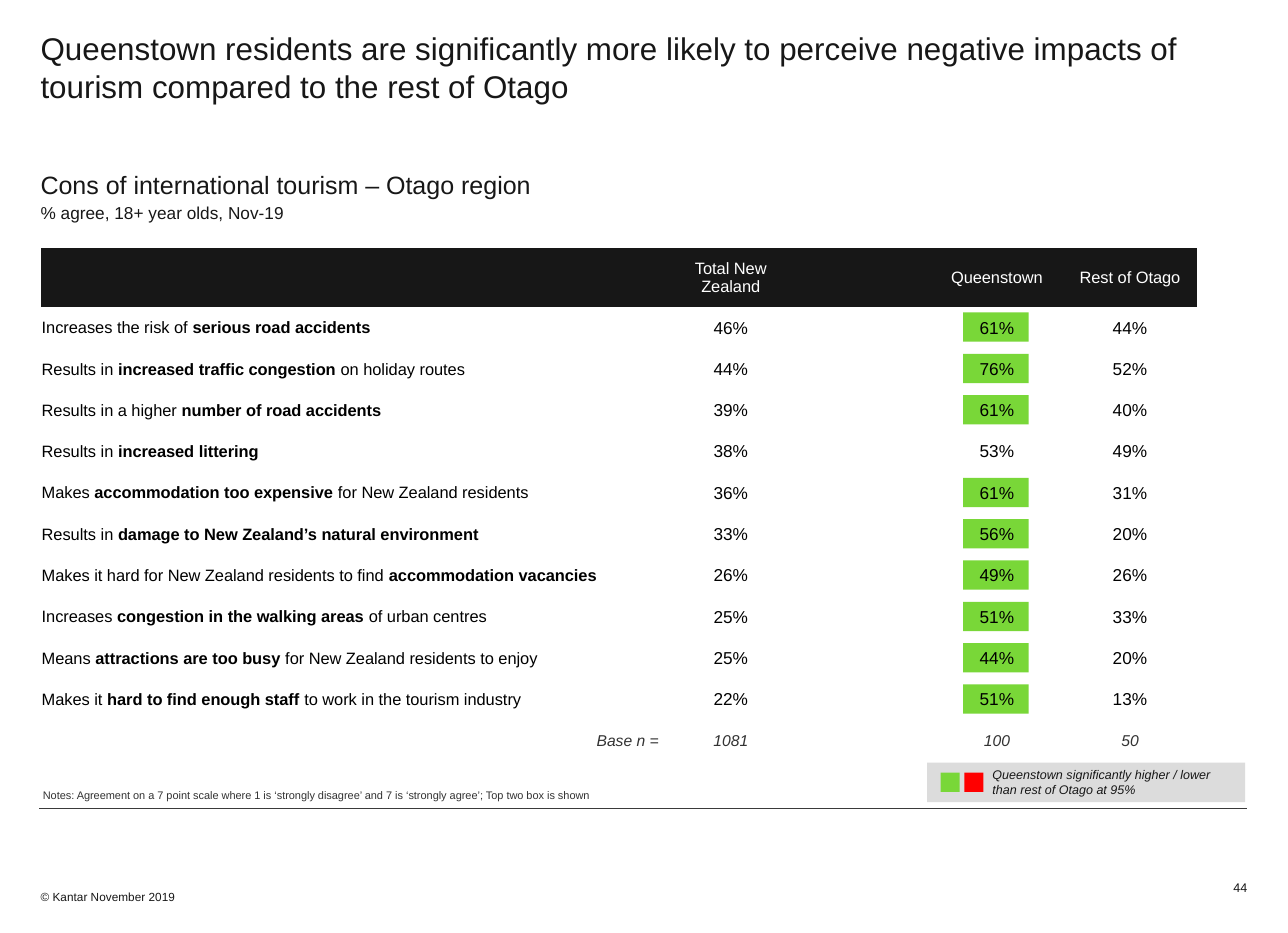
from pptx import Presentation
from pptx.dml.color import RGBColor
from pptx.enum.shapes import MSO_CONNECTOR, MSO_SHAPE
from pptx.enum.text import MSO_ANCHOR, PP_ALIGN
from pptx.oxml.ns import qn
from pptx.util import Inches, Pt
from lxml import etree

RECTANGLE = MSO_SHAPE.RECTANGLE
STRAIGHT = MSO_CONNECTOR.STRAIGHT
TOP, MIDDLE, BOTTOM = MSO_ANCHOR.TOP, MSO_ANCHOR.MIDDLE, MSO_ANCHOR.BOTTOM
LEFT, CENTER, RIGHT = PP_ALIGN.LEFT, PP_ALIGN.CENTER, PP_ALIGN.RIGHT

FONT = "Arial"
INK = "171717"
GREY = "333333"
BLACK = "000000"
WHITE = "FFFFFF"
GREEN = "79D738"
RED = "FF0000"
PLAIN_TABLE_STYLE = "{2D5ABB26-0587-4C30-8999-92F81FD0307C}"

TABLE_LEFT, TABLE_TOP = 0.36, 2.2
LABEL_WIDTH, VALUE_WIDTH = 5.53, 1.18
HEADER_HEIGHT, TABLE_HEIGHT = 0.52, 4.55

HEADINGS = ["", "Total New Zealand", "", "Queenstown", "Rest of Otago"]
IMPACTS = [
    ("Increases the risk of ", "serious road accidents", "", 46, 61, 44),
    ("Results in ", "increased traffic congestion ", "on holiday routes", 44, 76, 52),
    ("Results in a higher ", "number of road accidents", "", 39, 61, 40),
    ("Results in ", "increased littering", "", 38, 53, 49),
    ("Makes ", "accommodation too expensive ", "for New Zealand residents", 36, 61, 31),
    ("Results in ", "damage to New Zealand’s natural environment", "", 33, 56, 20),
    ("Makes it hard for New Zealand residents to find ", "accommodation vacancies", "", 26, 49, 26),
    ("Increases ", "congestion in the walking areas ", "of urban centres", 25, 51, 33),
    ("Means ", "attractions are too busy ", "for New Zealand residents to enjoy", 25, 44, 20),
    ("Makes it ", "hard to find enough staff ", "to work in the tourism industry", 22, 51, 13),
]
NOT_SIGNIFICANT = {"increased littering"}
BASES = ["Base n =", "1081", "", "100", "50"]
ROW_HEIGHT = (TABLE_HEIGHT - HEADER_HEIGHT) / (len(IMPACTS) + 1)


def color(value):
    return RGBColor.from_string(value)


def add_span(para, text, size, ink=INK, bold=False, italic=False):
    span = para.add_run()
    span.text = text
    span.font.name = FONT
    span.font.size = Pt(size)
    span.font.bold = bold
    span.font.italic = italic
    span.font.color.rgb = color(ink)


def set_margins(target, left, top, right, bottom):
    target.margin_left = Inches(left)
    target.margin_top = Inches(top)
    target.margin_right = Inches(right)
    target.margin_bottom = Inches(bottom)


def add_text(page, place, lines, ink=INK, margins=(0, 0, 0, 0), anchor=TOP, align=LEFT, italic=False):
    box = page.shapes.add_textbox(*map(Inches, place))
    frame = box.text_frame
    frame.word_wrap = True
    frame.vertical_anchor = anchor
    set_margins(frame, *margins)
    for index, (text, size) in enumerate(lines):
        para = frame.add_paragraph() if index else frame.paragraphs[0]
        para.alignment = align
        if index:
            para.space_before = Pt(size * 0.2)
        add_span(para, text, size, ink, italic=italic)


def add_block(page, place, fill):
    block = page.shapes.add_shape(RECTANGLE, *map(Inches, place))
    block.shadow.inherit = False
    block.fill.solid()
    block.fill.fore_color.rgb = color(fill)
    block.line.fill.background()


def add_rule(page, left, right, top):
    rule = page.shapes.add_connector(STRAIGHT, Inches(left), Inches(top), Inches(right), Inches(top))
    rule.line.color.rgb = color("3A3A3A")
    rule.line.width = Pt(0.75)
    etree.SubElement(rule.element.spPr, qn("a:effectLst"))


def fill_cell(cell, spans, align=CENTER, fill=None, right=0.01):
    set_margins(cell, 0.01, 0.01, right, 0)
    cell.vertical_anchor = MIDDLE
    if fill:
        cell.fill.solid()
        cell.fill.fore_color.rgb = color(fill)
    else:
        cell.fill.background()
    para = cell.text_frame.paragraphs[0]
    para.alignment = align
    for text, size, ink, bold, italic in spans:
        if text:
            add_span(para, text, size, ink, bold, italic)


def add_highlights(page):
    left = TABLE_LEFT + LABEL_WIDTH + 2 * VALUE_WIDTH + 0.29
    for index, impact in enumerate(IMPACTS):
        if impact[1] not in NOT_SIGNIFICANT:
            top = TABLE_TOP + HEADER_HEIGHT + 0.05 + index * ROW_HEIGHT
            add_block(page, (left, top, 0.58, 0.26), GREEN)


def add_impact_table(page):
    widths = [LABEL_WIDTH] + [VALUE_WIDTH] * 4
    place = (TABLE_LEFT, TABLE_TOP, sum(widths), TABLE_HEIGHT)
    frame = page.shapes.add_table(len(IMPACTS) + 2, len(widths), *map(Inches, place))
    for style in frame.element.iter(qn("a:tableStyleId")):
        style.text = PLAIN_TABLE_STYLE
    table = frame.table
    table.first_row = False
    table.horz_banding = False
    for column, width in zip(table.columns, widths):
        column.width = Inches(width)
    for index, row in enumerate(table.rows):
        row.height = Inches(ROW_HEIGHT if index else HEADER_HEIGHT)

    for column, heading in enumerate(HEADINGS):
        fill_cell(table.cell(0, column), [(heading, 10.5, WHITE, False, False)], fill=INK)
    for row, (before, strong, after, total, queenstown, rest) in enumerate(IMPACTS, 1):
        label = [(text, 10.5, BLACK, text is strong, False) for text in (before, strong, after)]
        fill_cell(table.cell(row, 0), label, LEFT, WHITE)
        for column, value in enumerate((total, None, queenstown, rest), 1):
            text = "" if value is None else f"{value}%"
            fill_cell(table.cell(row, column), [(text, 11, BLACK, False, False)])
    for column, text in enumerate(BASES):
        spans = [(text, 10, GREY, False, True)]
        cell = table.cell(len(IMPACTS) + 1, column)
        if column:
            fill_cell(cell, spans)
        else:
            fill_cell(cell, spans, RIGHT, WHITE, 0.05)


def add_legend(page):
    add_block(page, (8.22, 6.76, 2.82, 0.35), "DCDCDC")
    add_text(page, (8.76, 6.76, 2.14, 0.35),
             [("Queenstown significantly higher / lower than rest of Otago at 95%", 8)],
             margins=(0.04,) * 4, italic=True)
    for left, fill in ((8.34, GREEN), (8.55, RED)):
        add_block(page, (left, 6.85, 0.17, 0.17), fill)


def main():
    deck = Presentation()
    deck.slide_width = Inches(11.42)
    deck.slide_height = Inches(8.27)
    page = deck.slides.add_slide(deck.slide_layouts[6])

    add_rule(page, 0.35, 11.06, 7.17)
    add_text(page, (0.36, 7.65, 2.78, 0.58), [("© Kantar November 2019", 7.5)],
             margins=(0, 0, 0, 0.31), anchor=BOTTOM)
    add_text(page, (0.36, 0, 10.7, 1.24),
             [("Queenstown residents are significantly more likely to perceive negative "
               "impacts of tourism compared to the rest of Otago", 20)],
             margins=(0, 0.26, 0, 0))
    add_text(page, (0.36, 1.24, 10.7, 0.92),
             [("Cons of international tourism – Otago region", 16),
              ("% agree, 18+ year olds, Nov-19", 11)],
             margins=(0, 0.26, 0, 0))
    add_text(page, (0.38, 6.88, 9.45, 0.23),
             [("Notes: Agreement on a 7 point scale where 1 is ‘strongly disagree’ and 7 is "
               "‘strongly agree’; Top two box is shown", 7)],
             ink=GREY, anchor=BOTTOM)
    add_highlights(page)
    add_impact_table(page)
    add_legend(page)
    add_text(page, (10.43, 7.63, 0.63, 0.3), [("44", 8)], anchor=BOTTOM, align=RIGHT)
    deck.save("out.pptx")


if __name__ == "__main__":
    main()
